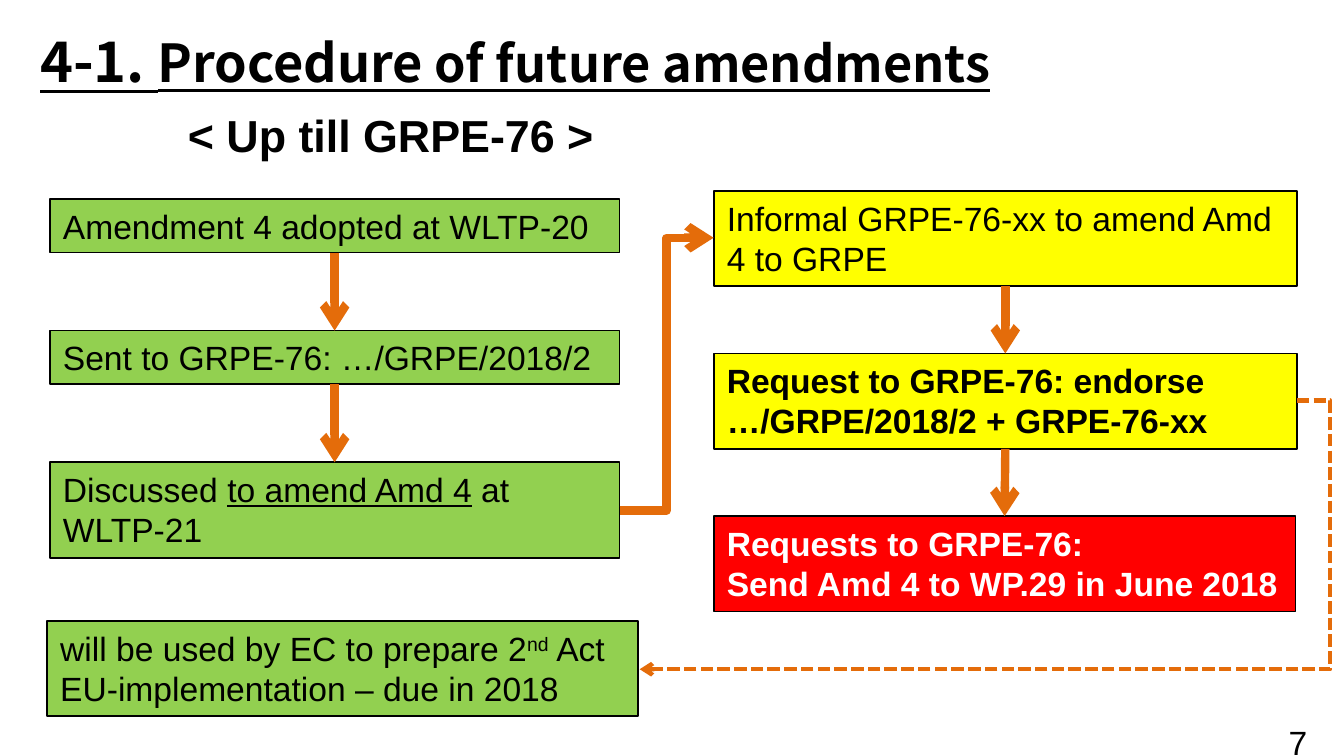
from lxml.etree import SubElement
from pptx import Presentation
from pptx.dml.color import RGBColor
from pptx.enum.dml import MSO_LINE
from pptx.enum.shapes import MSO_CONNECTOR, MSO_SHAPE
from pptx.enum.text import MSO_ANCHOR, MSO_AUTO_SIZE, PP_ALIGN
from pptx.oxml.ns import qn
from pptx.util import Inches, Pt

GREEN, YELLOW, RED = "92D050", "FFFF00", "FF0000"
BLACK, WHITE, ORANGE = "000000", "FFFFFF", "E46C0A"


def tint(color, code):
    color.rgb = RGBColor.from_string(code)


def write(shape, paras, wrap=True, code=BLACK, **base):
    frame = shape.text_frame
    frame.word_wrap = wrap
    frame.auto_size = MSO_AUTO_SIZE.SHAPE_TO_FIT_TEXT
    frame.vertical_anchor = MSO_ANCHOR.TOP
    for i, runs in enumerate(paras):
        para = frame.add_paragraph() if i else frame.paragraphs[0]
        para.alignment = PP_ALIGN.LEFT
        for text, style in runs:
            run = para.add_run()
            run.text = text
            look = {"name": "Arial", "size": Pt(18), **base, **style}
            raised = look.pop("raised", False)
            for key, value in look.items():
                setattr(run.font, key, value)
            tint(run.font.color, code)
            if raised:
                run._r.get_or_add_rPr().set("baseline", "30000")


deck = Presentation()
deck.slide_width = Inches(10)
deck.slide_height = Inches(10) * 9 // 16
slide = deck.slides.add_slide(deck.slide_layouts[6])
shapes = slide.shapes

labels = [
    ((9.49, 5.32, 0.51, 0.4), [("7", {})], {"wrap": False}),
    ((0.2, 0.15, 7.93, 0.61),
     [("4-1. ", {"size": Pt(30)}), ("Procedure", {"size": Pt(28)}),
      (" of future amendments", {"size": Pt(27)})],
     {"wrap": False, "name": "Noto Sans CJK JP", "bold": True, "underline": True}),
    ((1.3, 0.75, 4.24, 0.5), [("< Up till GRPE-76 >", {})],
     {"size": Pt(24), "bold": True}),
]
for place, runs, style in labels:
    write(shapes.add_textbox(*map(Inches, place)), [runs], **style)

steps = {
    "adopt": ((0.37, 1.48, 4.24, 0.4), GREEN,
              [[("Amendment 4 adopted at WLTP-20", {})]], {}),
    "send": ((0.37, 2.46, 4.24, 0.4), GREEN,
             [[("Sent to GRPE-76: …/GRPE/2018/2", {})]], {}),
    "discuss": ((0.37, 3.44, 4.24, 0.71), GREEN,
                [[("Discussed ", {}), ("to amend Amd 4", {"underline": True}),
                  (" at WLTP-21", {})]], {}),
    "inform": ((5.31, 1.42, 4.34, 0.71), YELLOW,
               [[("Informal GRPE-76-xx to amend Amd 4 to GRPE", {})]], {}),
    "endorse": ((5.31, 2.63, 4.34, 0.71), YELLOW,
                [[("Request to GRPE-76: endorse …/GRPE/2018/2 + GRPE-76-xx", {})]],
                {"bold": True}),
    "request": ((5.31, 3.84, 4.33, 0.71), RED,
                [[("Requests to GRPE-76:", {})],
                 [("Send Amd 4 to WP.29 in June 2018", {})]],
                {"bold": True, "code": WHITE}),
    "act": ((0.35, 4.62, 4.4, 0.71), GREEN,
            [[("will be used by EC to prepare 2", {}), ("nd", {"raised": True}),
              (" Act EU-implementation – due in 2018", {})]], {}),
}
boxes = {}
for name, (place, code, paras, style) in steps.items():
    box = shapes.add_shape(MSO_SHAPE.RECTANGLE, *map(Inches, place))
    box.shadow.inherit = False
    box.fill.solid()
    tint(box.fill.fore_color, code)
    tint(box.line.color, BLACK)
    box.line.width = Pt(1)
    write(box, paras, **style)
    boxes[name] = box

arrows = []
for start, end in [("adopt", "send"), ("send", "discuss"),
                   ("inform", "endorse"), ("endorse", "request")]:
    arrow = shapes.add_connector(MSO_CONNECTOR.STRAIGHT, 0, 0, 0, 0)
    arrow.begin_connect(boxes[start], 2)
    arrow.end_connect(boxes[end], 0)
    arrows.append((arrow, {"width": Pt(4.5)}))

bends = [
    ((4.61, 3.8, 5.31, 1.77), 50000, {"width": Pt(4.5)}),
    ((9.65, 2.98, 4.76, 4.98), -5100,
     {"width": Pt(2.25), "dash_style": MSO_LINE.SQUARE_DOT}),
]
for ends, turn, style in bends:
    arrow = shapes.add_connector(MSO_CONNECTOR.ELBOW, *map(Inches, ends))
    guides = arrow._element.spPr.prstGeom.get_or_add_avLst()
    SubElement(guides, qn("a:gd"), name="adj1", fmla=f"val {turn}")
    arrows.append((arrow, style))

for arrow, style in arrows:
    tint(arrow.line.color, ORANGE)
    for key, value in style.items():
        setattr(arrow.line, key, value)
    SubElement(arrow.line._get_or_add_ln(), qn("a:tailEnd"), type="arrow")
    SubElement(arrow._element.spPr, qn("a:effectLst"))

deck.save("out.pptx")
